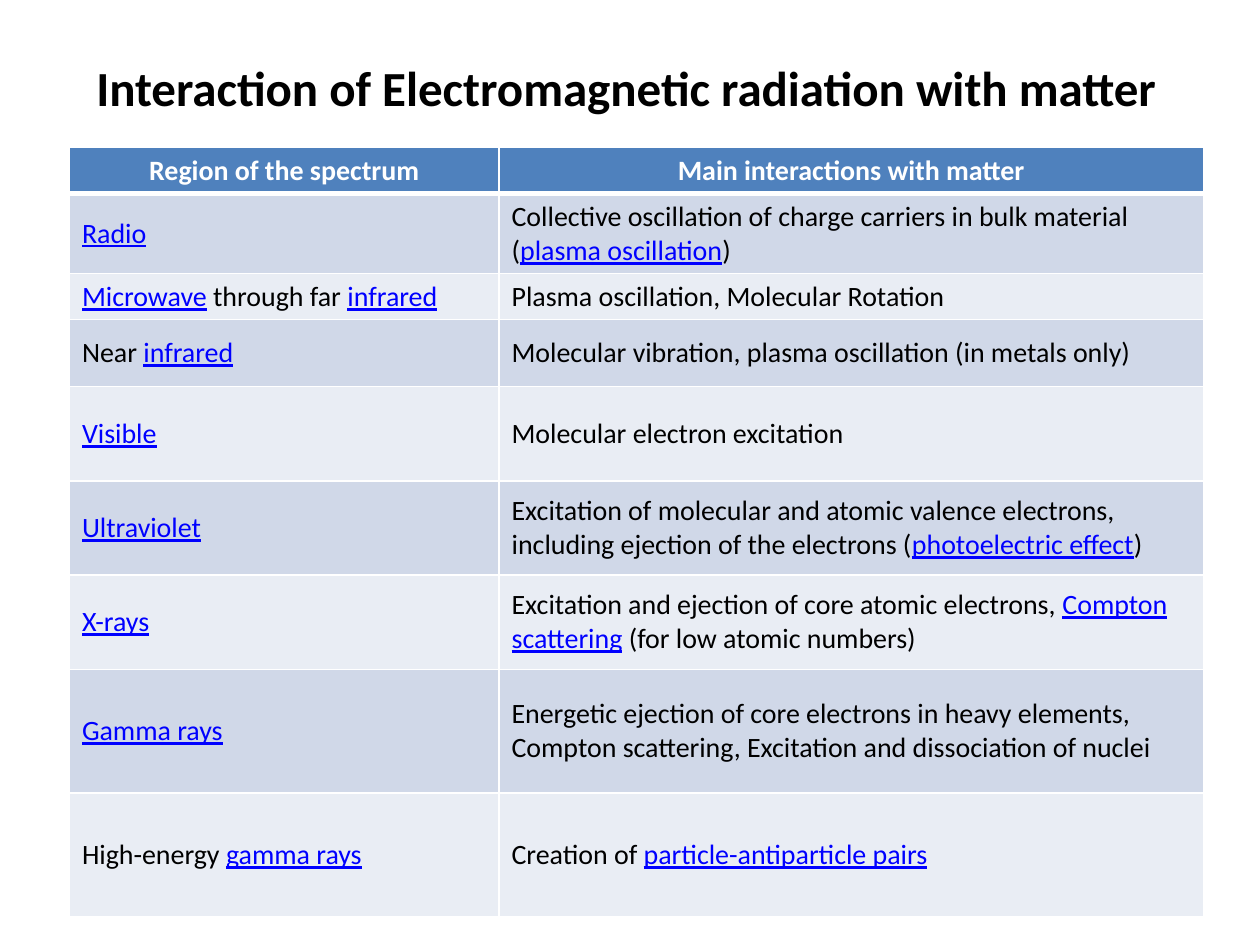
from typing import NamedTuple

from lxml import etree
from pptx import Presentation
from pptx import util as u
from pptx.dml.color import RGBColor
from pptx.enum import text
from pptx.oxml import ns

FONT = "Calibri"
WHITE, BLACK, LINK_BLUE = "FFFFFF", "000000", "0000FF"
HEADER_FILL, BAND_FILLS = "4F81BD", ("D0D8E8", "E9EDF4")


class Style(NamedTuple):
    size: int = 16
    color: str = BLACK
    bold: bool = False
    underline: bool = False


class Piece(NamedTuple):
    words: str
    style: Style = Style()


class Region(NamedTuple):
    height: float  # cm
    name: list[Piece]
    interactions: list[Piece]


TITLE = Style(size=28, bold=True)
HEADER = Style(color=WHITE, bold=True)
LINK = Style(color=LINK_BLUE, underline=True)

HEADER_HEIGHT = 0.79
COLUMN_WIDTHS = (8.66, 14.2)
HEADINGS = ("Region of the spectrum", "Main interactions with matter")
REGIONS = [
    Region(1.35, [Piece("Radio", LINK)],
           [Piece("Collective oscillation of charge carriers in bulk material ("),
            Piece("plasma oscillation", LINK), Piece(")")]),
    Region(0.79, [Piece("Microwave", LINK), Piece(" through far "), Piece("infrared", LINK)],
           [Piece("Plasma oscillation, Molecular Rotation")]),
    Region(1.35, [Piece("Near "), Piece("infrared", LINK)],
           [Piece("Molecular vibration, plasma oscillation (in metals only)")]),
    Region(1.9, [Piece("Visible", LINK)], [Piece("Molecular electron excitation")]),
    Region(1.9, [Piece("Ultraviolet", LINK)],
           [Piece("Excitation of molecular and atomic valence electrons, "
                  "including ejection of the electrons ("),
            Piece("photoelectric effect", LINK), Piece(")")]),
    Region(1.9, [Piece("X-rays", LINK)],
           [Piece("Excitation and ejection of core atomic electrons, "),
            Piece("Compton scattering", LINK), Piece(" (for low atomic numbers)")]),
    Region(2.49, [Piece("Gamma rays", LINK)],
           [Piece("Energetic ejection of core electrons in heavy elements, "
                  "Compton scattering, Excitation and dissociation of nuclei")]),
    Region(2.49, [Piece("High-energy "), Piece("gamma rays", LINK)],
           [Piece("Creation of "), Piece("particle-antiparticle pairs", LINK)]),
]


def rgb(color: str) -> RGBColor:
    return RGBColor.from_string(color)


def write(paragraph, pieces: list[Piece], centred: bool = False) -> None:
    paragraph.alignment = text.PP_ALIGN.CENTER if centred else text.PP_ALIGN.LEFT
    for words, style in pieces:
        run = paragraph.add_run()
        run.text = words
        run.font.name = FONT
        run.font.size = u.Pt(style.size)
        run.font.bold = style.bold
        run.font.underline = style.underline
        run.font.color.rgb = rgb(style.color)


def add_borders(cell, bottom: int, top: int) -> None:
    """Draw white borders; widths are in points."""
    properties = cell._tc.get_or_add_tcPr()
    for side, width in (("L", 1), ("R", 1), ("T", top), ("B", bottom)):
        line = etree.SubElement(properties, ns.qn(f"a:ln{side}"), w=str(u.Pt(width)))
        fill = etree.SubElement(line, ns.qn("a:solidFill"))
        etree.SubElement(fill, ns.qn("a:srgbClr"), val=WHITE)


def fill_cell(cell, pieces: list[Piece], fill: str, centred: bool = False,
              top: int = 1, bottom: int = 1) -> None:
    add_borders(cell, bottom, top)
    cell.fill.solid()
    cell.fill.fore_color.rgb = rgb(fill)
    cell.vertical_anchor = text.MSO_ANCHOR.MIDDLE
    write(cell.text_frame.paragraphs[0], pieces, centred)


def add_title(slide, words: str) -> None:
    frame = slide.shapes.add_textbox(u.Cm(1.19), u.Cm(0.76), u.Cm(22.86), u.Cm(2)).text_frame
    frame.word_wrap = True
    frame.vertical_anchor = text.MSO_ANCHOR.MIDDLE
    write(frame.paragraphs[0], [Piece(words, TITLE)], centred=True)


def add_region_table(slide) -> None:
    heights = [HEADER_HEIGHT] + [region.height for region in REGIONS]
    table = slide.shapes.add_table(
        len(heights), len(COLUMN_WIDTHS), u.Cm(1.4), u.Cm(2.97),
        u.Cm(sum(COLUMN_WIDTHS)), u.Cm(sum(heights))).table
    for column, width in zip(table.columns, COLUMN_WIDTHS):
        column.width = u.Cm(width)
    for row, height in zip(table.rows, heights):
        row.height = u.Cm(height)

    # Header row, with a thick rule below it
    for column, heading in enumerate(HEADINGS):
        fill_cell(table.cell(0, column), [Piece(heading, HEADER)], HEADER_FILL,
                  centred=True, bottom=3)

    # Banded rows, one for each region
    for index, region in enumerate(REGIONS):
        for column, pieces in enumerate((region.name, region.interactions)):
            fill_cell(table.cell(index + 1, column), pieces, BAND_FILLS[index % 2],
                      top=3 if index == 0 else 1)


def main() -> None:
    presentation = Presentation()
    presentation.slide_width, presentation.slide_height = u.Cm(25.4), u.Cm(19.05)
    slide = presentation.slides.add_slide(presentation.slide_layouts[6])
    add_title(slide, "Interaction of Electromagnetic radiation with matter")
    add_region_table(slide)
    presentation.save("out.pptx")


if __name__ == "__main__":
    main()
